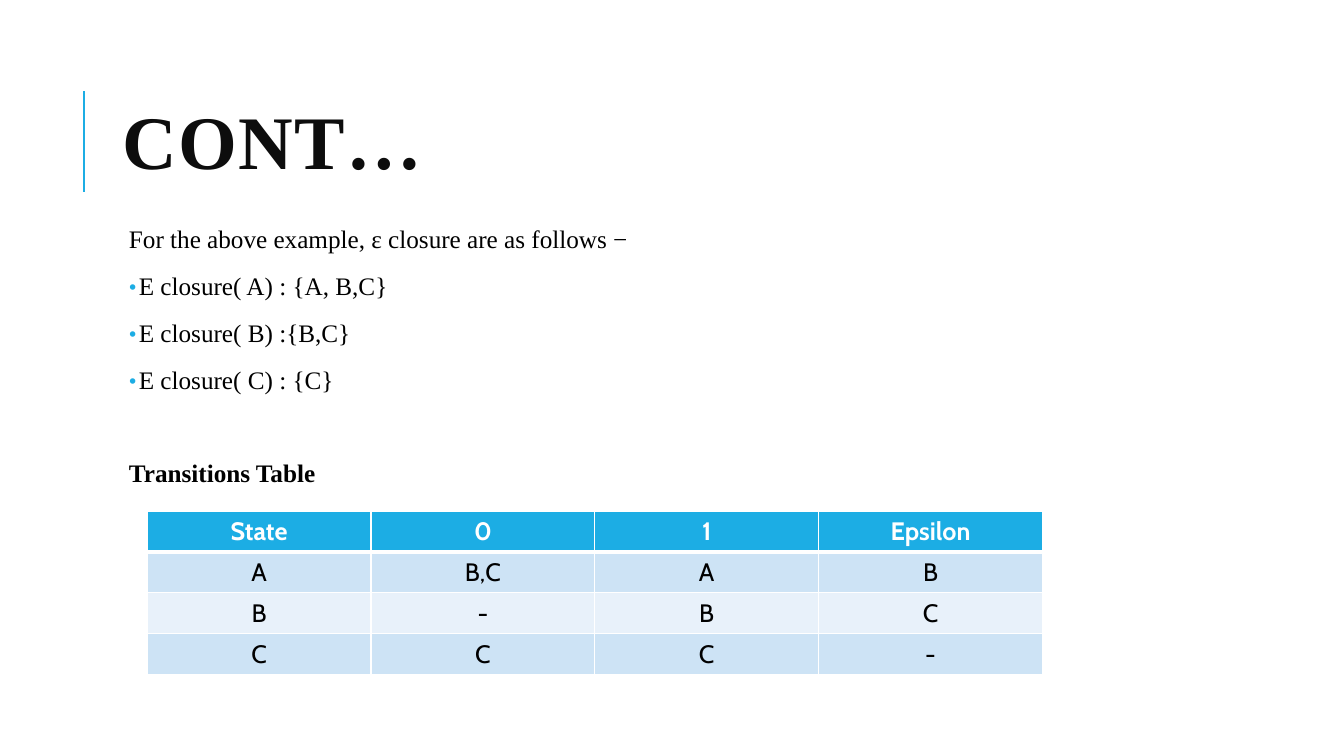
import pptx
import pptx.dml.color
import pptx.enum.shapes
import pptx.enum.text
import pptx.oxml
import pptx.oxml.ns
import pptx.util
from lxml import etree

Cm = pptx.util.Cm
Pt = pptx.util.Pt
qn = pptx.oxml.ns.qn
ALIGN = pptx.enum.text.PP_ALIGN
ANCHOR = pptx.enum.text.MSO_ANCHOR

theme = {
    "accent": "1CADE4", "title": "0D0D0D", "text": "000000", "white": "FFFFFF",
    "bands": ["CDE3F5", "E8F1FA"],
    "serif": "Times New Roman", "sans": "Cabin",
    "title_size": 54, "body_size": 18,
}


def apply_format(target, values):
    for name, value in values.items():
        setattr(target, name, value)


def write_run(paragraph, text, color, **font_values):
    run = paragraph.add_run()
    run.text = text
    apply_format(run.font, font_values)
    run.font.color.rgb = pptx.dml.color.RGBColor.from_string(color)
    return run


presentation = pptx.Presentation()
apply_format(presentation, {"slide_width": Cm(33.87), "slide_height": Cm(19.05)})
slide = presentation.slides.add_slide(presentation.slide_layouts[6])

title_rule = slide.shapes.add_connector(
    pptx.enum.shapes.MSO_CONNECTOR.STRAIGHT, Cm(2.12), Cm(4.83), Cm(2.12), Cm(2.3))
title_rule.line.color.rgb = pptx.dml.color.RGBColor.from_string(theme["accent"])
title_rule.line.width = Pt(1.5)
etree.SubElement(title_rule._element.spPr, qn("a:effectLst"))

title_box = slide.shapes.add_textbox(Cm(2.84), Cm(1.63), Cm(27), Cm(4.17))
apply_format(title_box.text_frame, {"word_wrap": True, "vertical_anchor": ANCHOR.MIDDLE})
title_paragraph = title_box.text_frame.paragraphs[0]
title_paragraph.line_spacing = 0.8
title_run = write_run(title_paragraph, "CONT…", theme["title"], name=theme["serif"],
                      size=Pt(theme["title_size"]), bold=True)
title_run.font._element.set("spc", "100")

body_box = slide.shapes.add_textbox(Cm(3.12), Cm(5.59), Cm(29.08), Cm(12.5))
inset = Cm(0.13)
apply_format(body_box.text_frame, {
    "word_wrap": True, "margin_left": inset, "margin_right": inset,
    "margin_top": inset, "margin_bottom": inset})
body_lines = [
    ("For the above example, ε closure are as follows −", "intro"),
    ("E closure( A) : {A, B,C}", "bullet"),
    ("E closure( B) :{B,C}", "bullet"),
    ("E closure( C) : {C}", "bullet"),
    ("Transitions Table", "heading"),
]
for index, (text, role) in enumerate(body_lines):
    paragraph = body_box.text_frame.paragraphs[0] if index == 0 else body_box.text_frame.add_paragraph()
    apply_format(paragraph, {
        "alignment": ALIGN.JUSTIFY if role == "intro" else ALIGN.LEFT,
        "line_spacing": 0.9,
        "space_before": Pt(45.4 if role == "heading" else 12),
        "space_after": Pt(2)})
    write_run(paragraph, text, theme["text"], name=theme["serif"],
              size=Pt(theme["body_size"]), bold=role == "heading")
    if role == "bullet":
        properties = paragraph._p.get_or_add_pPr()
        properties.set("marL", str(Cm(0.25)))
        properties.set("indent", str(-Cm(0.25)))
        bullet_color = etree.SubElement(properties, qn("a:buClr"))
        etree.SubElement(bullet_color, qn("a:srgbClr"), val=theme["accent"])
        etree.SubElement(properties, qn("a:buFont"), typeface=theme["sans"])
        etree.SubElement(properties, qn("a:buChar"), char="•")

transitions = [
    ["State", "0", "1", "Epsilon"],
    ["A", "B,C", "A", "B"],
    ["B", "-", "B", "C"],
    ["C", "C", "C", "-"],
]
table = slide.shapes.add_table(
    4, 4, Cm(3.71), Cm(12.88), Cm(22.56), Cm(4.12)).table
for column in table.columns:
    column.width = Cm(5.64)
for row_index, values in enumerate(transitions):
    table.rows[row_index].height = Cm(1.03)
    is_header = row_index == 0
    fill_color = theme["accent"] if is_header else theme["bands"][(row_index - 1) % 2]
    border_widths = {"lnL": 1, "lnR": 1, "lnT": 3 if row_index == 1 else 1, "lnB": 3 if is_header else 1}
    for column_index, text in enumerate(values):
        cell = table.cell(row_index, column_index)
        cell_properties = cell._tc.get_or_add_tcPr()
        for side, width in border_widths.items():
            border = etree.SubElement(cell_properties, qn(f"a:{side}"), w=str(Pt(width)))
            border_fill = etree.SubElement(border, qn("a:solidFill"))
            etree.SubElement(border_fill, qn("a:srgbClr"), val=theme["white"])
        cell.fill.solid()
        cell.fill.fore_color.rgb = pptx.dml.color.RGBColor.from_string(fill_color)
        paragraph = cell.text_frame.paragraphs[0]
        paragraph.alignment = ALIGN.CENTER
        write_run(paragraph, text, theme["white"] if is_header else theme["text"],
                  name=theme["sans"], size=Pt(theme["body_size"]), bold=is_header)

presentation.save("out.pptx")
